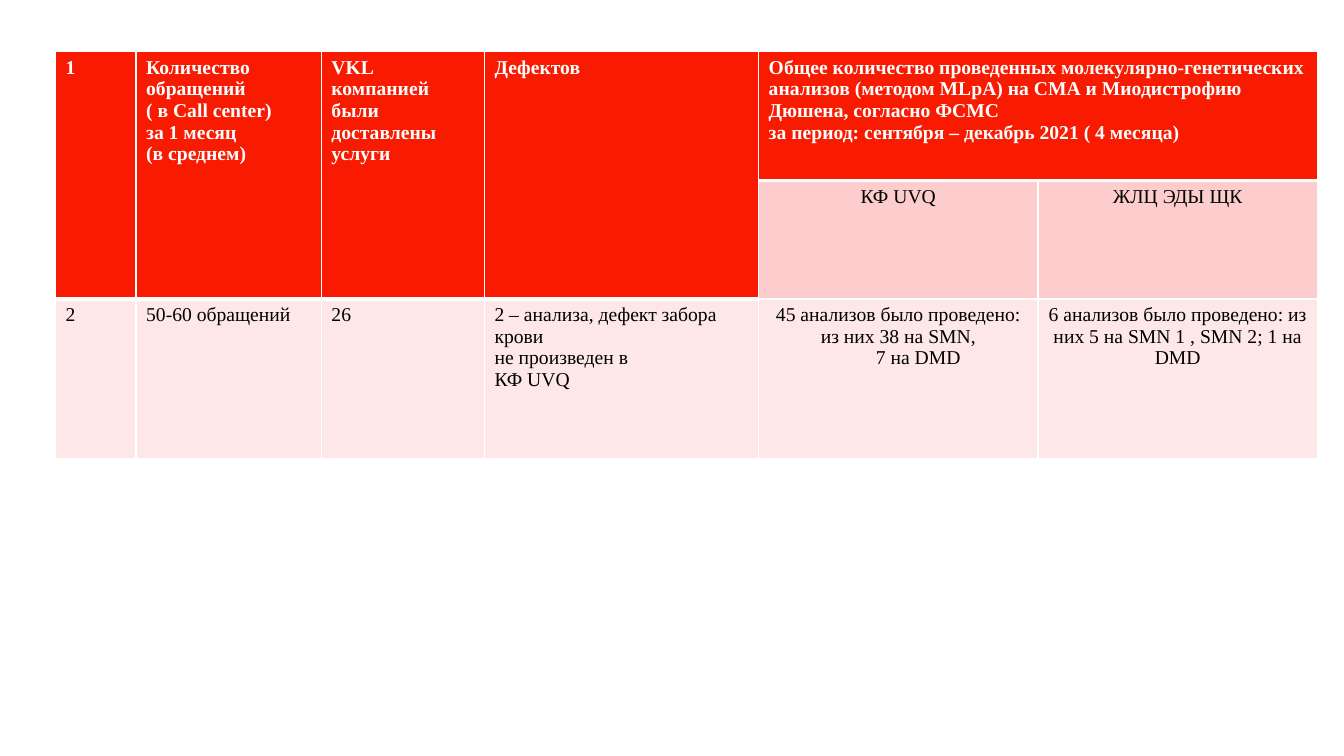
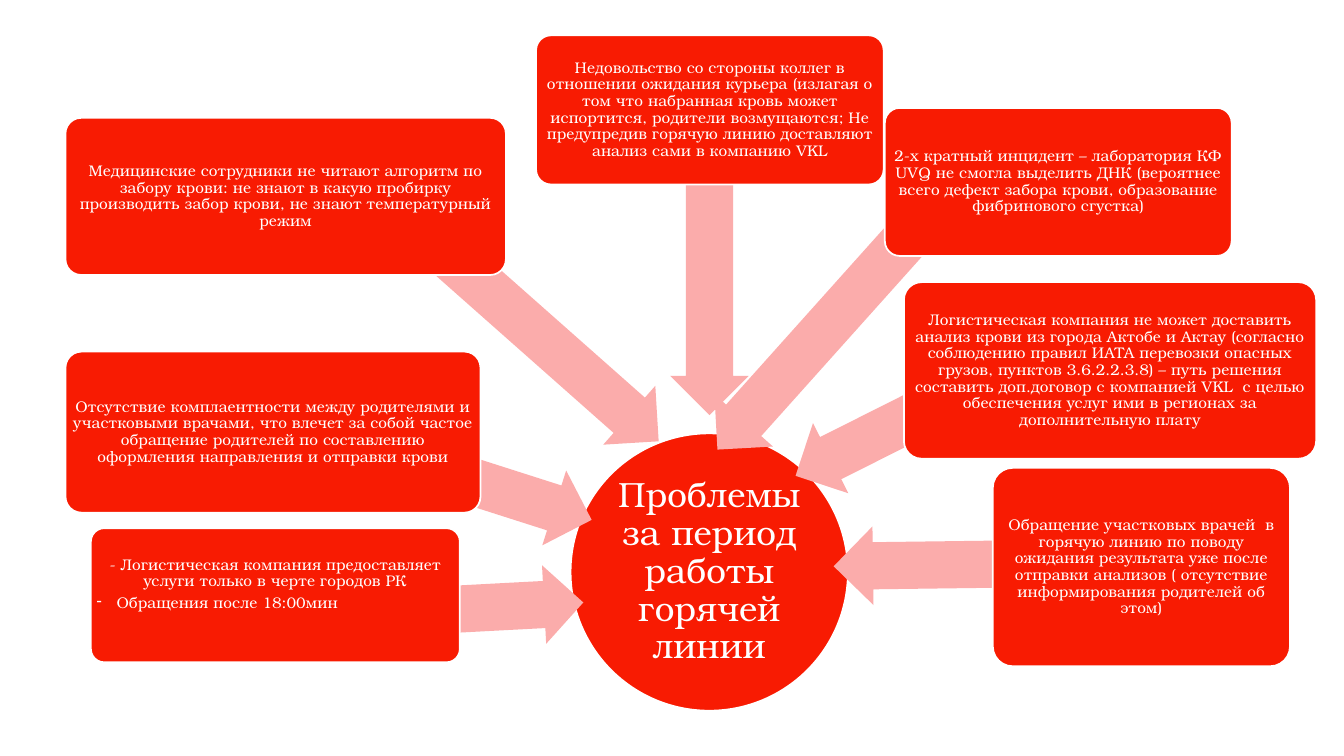
import math

from lxml import etree
from pptx import Presentation
from pptx.dml.color import RGBColor
from pptx.enum.shapes import MSO_SHAPE
from pptx.enum.text import MSO_ANCHOR, PP_ALIGN
from pptx.oxml.ns import qn
from pptx.util import Cm, Pt

RED = RGBColor(0xF8, 0x1B, 0x02)
ARROW_PINK = RGBColor(0xFB, 0xAC, 0xAB)
SUBHEAD_PINK = RGBColor(0xFC, 0xCD, 0xCC)
ROW_PINK = RGBColor(0xFE, 0xE8, 0xE7)
WHITE = RGBColor(0xFF, 0xFF, 0xFF)
BLACK = RGBColor(0, 0, 0)

TABLE_FONT = "Times New Roman"
DIAGRAM_FONT = "TeX Gyre Bonum"
LEFT, CENTER = PP_ALIGN.LEFT, PP_ALIGN.CENTER
MIDDLE = MSO_ANCHOR.MIDDLE
ELLIPSE = MSO_SHAPE.OVAL
ROUND_BOX = MSO_SHAPE.ROUNDED_RECTANGLE
LEFT_ARROW = MSO_SHAPE.LEFT_ARROW

COLUMN_WIDTHS = (2.03, 4.67, 4.11, 6.91, 7.04, 7.04)
ROW_HEIGHTS = (3.25, 2.77, 4.01)
FIRST_CENTERED_COLUMN = 4
TABLE_ROWS = (
    (
        "1",
        "Количество обращений\n( в Сall center)\nза 1 месяц\n(в среднем)",
        "VKL компанией были доставлены услуги",
        "Дефектов",
        "Общее количество проведенных молекулярно-генетических анализов "
        "(методом MLpA) на СМА и Миодистрофию Дюшена, согласно ФСМС\n"
        "за период: сентября – декабрь 2021 ( 4 месяца)",
        "",
    ),
    ("", "", "", "", "КФ UVQ", "ЖЛЦ ЭДЫ ЩК"),
    (
        "2",
        "50-60 обращений",
        "26",
        "2 – анализа, дефект забора крови\nне произведен в\nКФ UVQ",
        "45 анализов было проведено:\nиз них 38 на SMN,\n7 на DMD",
        "6 анализов было проведено: из них 5 на SMN 1 , SMN 2; 1 на DMD",
    ),
)

HUB_TEXT = "Проблемы за период работы горячей линии"
HUB_BOX = (14.38, 10.92, 6.99, 6.99)
ARROW_BREADTH = 1.98
# Each problem: box (left, top, width, height), arrow tail, arrow tip, text
PROBLEMS = (
    ((2.29, 13.31, 9.3, 3.38), (7.68, 15.55), (14.7, 15.18),
     "- Логистическая компания предоставляет услуги только в черте городов РК\n"
     "Обращения после 18:00мин"),
    ((1.65, 8.86, 10.46, 4.06), (7.65, 10.78), (14.91, 13.1),
     "Отсутствие комплаентности между родителями и участковыми врачами, "
     "что влечет за собой частое обращение родителей по составлению "
     "оформления направления и отправки крови"),
    ((1.65, 2.97, 11.1, 3.96), (8.97, 4.37), (16.6, 11.12),
     "Медицинские сотрудники не читают алгоритм по забору крови: не знают "
     "в какую пробирку производить забор крови, не знают температурный режим"),
    ((13.51, 0.89, 8.76, 3.76), (17.88, 2.74), (17.88, 10.46),
     "Недовольство со стороны коллег в отношении ожидания курьера (излагая "
     "о том что набранная кровь может испортится, родители возмущаются; "
     "Не предупредив горячую линию доставляют анализ сами в компанию VKL"),
    ((22.3, 2.72, 8.74, 3.73), (24.18, 4.52), (18.08, 11.33),
     "2-х кратный инцидент – лаборатория КФ UVQ не смогла выделить ДНК "
     "(вероятнее всего дефект забора крови, образование фибринового сгустка)"),
    ((22.78, 7.11, 10.39, 4.45), (26.63, 8.68), (20.05, 11.99),
     "Логистическая компания не может доставить анализ крови из города "
     "Актобе и Актау (согласно соблюдению правил ИАТА перевозки опасных "
     "грузов, пунктов 3.6.2.2.3.8) – путь решения составить доп.договор "
     "с компанией VKL  с целью обеспечения услуг ими в регионах "
     "за дополнительную плату"),
    ((25.02, 11.79, 7.49, 5.0), (27.99, 14.18), (21.01, 14.27),
     "Обращение участковых врачей  в горячую линию по поводу ожидания "
     "результата уже после отправки анализов ( отсутствие информирования "
     "родителей об этом)"),
)


def format_paragraph(paragraph, font_name, size, color, alignment, bold=False):
    paragraph.alignment = alignment
    for run in paragraph.runs:
        run.font.name = font_name
        run.font.size = Pt(size)
        run.font.bold = bold
        run.font.color.rgb = color


def indent_paragraph(paragraph, margin, hanging=0, bullet=None):
    properties = paragraph._p.get_or_add_pPr()
    properties.set("marL", str(margin))
    properties.set("indent", str(-hanging))
    if bullet:
        etree.SubElement(properties, qn("a:buChar")).set("char", bullet)


def set_cell_borders(cell, top, bottom):
    """Draw white borders; top and bottom are widths in points."""
    properties = cell._tc.get_or_add_tcPr()
    for side, width in (("L", 1), ("R", 1), ("T", top), ("B", bottom)):
        line = etree.SubElement(properties, qn("a:ln" + side))
        line.set("w", str(Pt(width)))
        fill = etree.SubElement(line, qn("a:solidFill"))
        etree.SubElement(fill, qn("a:srgbClr")).set("val", str(WHITE))


def format_cell(cell, text, row, column):
    centered = column >= FIRST_CENTERED_COLUMN
    header = row == 0 or (row == 1 and not centered)
    below_header = row == (1 if centered else 2)
    set_cell_borders(cell, 3 if below_header else 1, 3 if header else 1)
    cell.fill.solid()
    if header:
        cell.fill.fore_color.rgb = RED
    else:
        cell.fill.fore_color.rgb = SUBHEAD_PINK if row == 1 else ROW_PINK
    if text:
        cell.text_frame.text = text
        for paragraph in cell.text_frame.paragraphs:
            format_paragraph(paragraph, TABLE_FONT, 14,
                             WHITE if header else BLACK,
                             CENTER if centered and not header else LEFT, header)


def add_summary_table(slide, left, top):
    table = slide.shapes.add_table(
        len(ROW_HEIGHTS), len(COLUMN_WIDTHS), Cm(left), Cm(top),
        Cm(sum(COLUMN_WIDTHS)), Cm(sum(ROW_HEIGHTS))).table
    for column, width in zip(table.columns, COLUMN_WIDTHS):
        column.width = Cm(width)
    for row, height in zip(table.rows, ROW_HEIGHTS):
        row.height = Cm(height)
    for row, texts in enumerate(TABLE_ROWS):
        for column, text in enumerate(texts):
            format_cell(table.cell(row, column), text, row, column)
    for column in range(FIRST_CENTERED_COLUMN):
        table.cell(0, column).merge(table.cell(1, column))
    table.cell(0, 4).merge(table.cell(0, 5))
    indent_paragraph(table.cell(2, 4).text_frame.paragraphs[-1], Cm(1))


def add_node(slide, preset, box, text, size):
    """Add a red shape with white centred text."""
    shape = slide.shapes.add_shape(preset, *map(Cm, box))
    shape.shadow.inherit = False
    shape.fill.solid()
    shape.fill.fore_color.rgb = RED
    shape.line.color.rgb = WHITE
    shape.line.width = Pt(1.25)
    if preset == ROUND_BOX:
        shape.adjustments[0] = 0.1
    frame = shape.text_frame
    frame.word_wrap = True
    frame.vertical_anchor = MIDDLE
    frame.margin_left = frame.margin_right = Cm(0.05)
    frame.margin_top = frame.margin_bottom = Cm(0.05)
    frame.text = text
    for paragraph in frame.paragraphs:
        format_paragraph(paragraph, DIAGRAM_FONT, size, WHITE, CENTER)
        paragraph.line_spacing = 0.9
        paragraph.space_after = Pt(size * 0.35)
    return shape


def add_arrow(slide, tail, tip):
    """Add a block arrow whose axis runs from tail to tip."""
    length = math.dist(tail, tip)
    center_x, center_y = ((a + b) / 2 for a, b in zip(tail, tip))
    arrow = slide.shapes.add_shape(
        LEFT_ARROW, Cm(center_x - length / 2), Cm(center_y - ARROW_BREADTH / 2),
        Cm(length), Cm(ARROW_BREADTH))
    arrow.rotation = math.degrees(math.atan2(tail[1] - tip[1], tail[0] - tip[0])) % 360
    arrow.adjustments[0] = 0.6
    arrow.adjustments[1] = 0.5
    arrow.shadow.inherit = False
    arrow.fill.solid()
    arrow.fill.fore_color.rgb = ARROW_PINK
    arrow.line.fill.background()


def add_problem_diagram(slide):
    add_node(slide, ELLIPSE, HUB_BOX, HUB_TEXT, 25)
    for box, tail, tip, text in PROBLEMS:
        add_arrow(slide, tail, tip)
        frame = add_node(slide, ROUND_BOX, box, text, 11).text_frame
        if len(frame.paragraphs) > 1:
            frame.margin_bottom = Cm(0.6)
            bullet_line = frame.paragraphs[-1]
            bullet_line.alignment = LEFT
            indent_paragraph(bullet_line, Cm(0.5), Cm(0.5), "-")


def main():
    presentation = Presentation()
    presentation.slide_width = Cm(33.87)
    presentation.slide_height = Cm(19.05)
    blank = presentation.slide_layouts[6]
    add_summary_table(presentation.slides.add_slide(blank), 1.4, 1.3)
    add_problem_diagram(presentation.slides.add_slide(blank))
    presentation.save("out.pptx")


if __name__ == "__main__":
    main()
